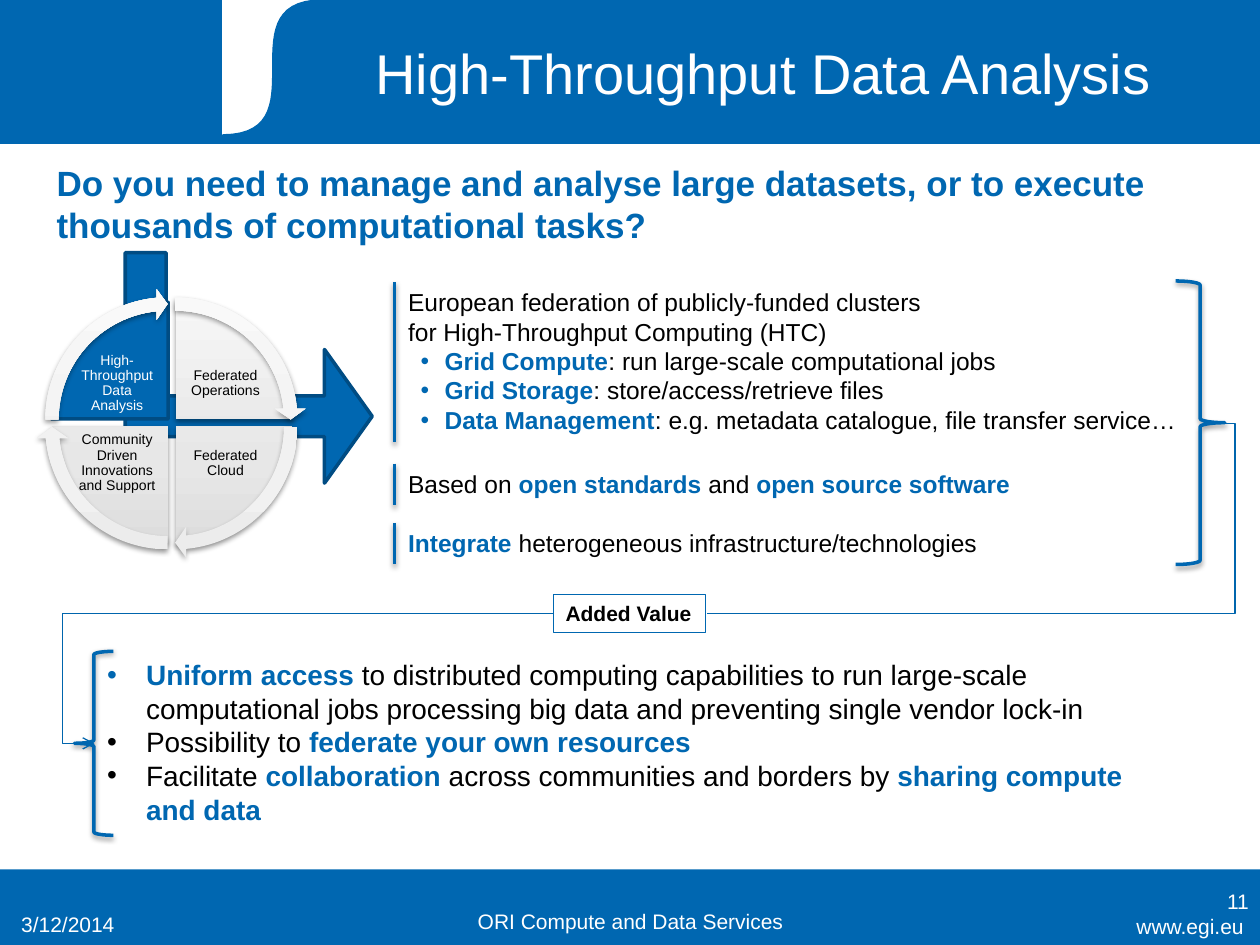
from copy import deepcopy

from lxml.etree import SubElement
from pptx import Presentation
from pptx.dml.color import RGBColor
from pptx.enum.shapes import MSO_CONNECTOR as Link, MSO_SHAPE as Form
from pptx.enum.text import MSO_ANCHOR as Anchor, MSO_AUTO_SIZE as Auto, PP_ALIGN as Align
from pptx.oxml.ns import qn
from pptx.util import Inches, Pt

HUES = {"blue": "0067B1", "dark": "004C83", "link": "0065AD", "white": "FFFFFF", "black": "000000"}
PALE = ["DDDDDD", "E7E7E7", "F6F6F6"]
RING = ["ECECEC", "F1F1F1", "F9F9F9"]


def rgb(hue):
    return RGBColor.from_string(HUES.get(hue, hue))


def box(*sides):
    return [Inches(side) for side in sides]


def shade(item, soft=True):
    fx = SubElement(item._element.spPr, qn("a:effectLst"))
    if soft:
        cast = SubElement(fx, qn("a:outerShdw"), blurRad=str(Pt(3.1)), dist=str(Pt(1.6)),
                          dir="5400000", rotWithShape="0")
        tint = SubElement(cast, qn("a:srgbClr"), val=HUES["black"])
        SubElement(tint, qn("a:alpha"), val="38000")


def paint(item, fill=None, line=None, width=0.75):
    if fill:
        item.fill.solid()
        item.fill.fore_color.rgb = rgb(fill)
    else:
        item.fill.background()
    if line:
        item.line.color.rgb = rgb(line)
        item.line.width = Pt(width)
    else:
        item.line.fill.background()


def blend(item, hues):
    item.fill.gradient()
    item.fill.gradient_angle = 90
    first = item._element.spPr.find(".//" + qn("a:gs"))
    first.addnext(deepcopy(first))
    for stop, hue, pos in zip(item.fill.gradient_stops, hues, (0, 0.35, 1)):
        stop.color.rgb = rgb(hue)
        stop.position = pos
    item.line.fill.background()
    shade(item)


def shape(slide, form, area, fill=None, line=None, width=0.75, adj=()):
    item = slide.shapes.add_shape(form, *box(*area))
    for num, val in enumerate(adj):
        item.adjustments[num] = val
    item.shadow.inherit = False
    paint(item, fill, line, width)
    return item


def dot(para, left, hang):
    props = para._p.get_or_add_pPr()
    props.set("marL", str(Inches(left)))
    props.set("indent", str(-Inches(hang)))
    SubElement(props, qn("a:buFont"), typeface="Arial")
    SubElement(props, qn("a:buChar"), char="•")


def write(frame, lines, size, hue="black", align=Align.LEFT, anchor=Anchor.TOP, bold=False, indent=None):
    frame.word_wrap = True
    frame.auto_size = Auto.NONE
    frame.vertical_anchor = anchor
    for num, line in enumerate(lines):
        para = frame.paragraphs[0] if num == 0 else frame.add_paragraph()
        para.alignment = align
        para.space_before = Pt(0)
        if indent and line.startswith("•"):
            dot(para, *indent)
        for part, words in enumerate(line.lstrip("•").split("*")):
            if words:
                run = para.add_run()
                run.text = words
                run.font.name = "Arial"
                run.font.size = Pt(size)
                run.font.bold = bold or part % 2 == 1
                run.font.color.rgb = rgb("blue" if part % 2 else hue)


def label(slide, area, lines, size, **style):
    frame = slide.shapes.add_textbox(*box(*area)).text_frame
    write(frame, lines, size, **style)
    return frame


def place(slide, item, area):
    item.left, item.top, item.width, item.height = box(*area)
    slide.shapes._spTree.append(item._element)


def header(slide, x, y, w, h):
    shape(slide, Form.RECTANGLE, (x, y, w, h), "blue", "blue")
    left, wide, tall = x + 1.77, 1.97, 1.07
    shape(slide, Form.RECTANGLE, (left, y, wide, tall), "white", "white")
    steps = [num / 30 for num in range(1, 31)]
    curve = [(left + 0.79 * (3 * t * (1 - t) ** 2 + t ** 3), y + tall * ((1 - t) ** 3 + 3 * t * (1 - t) ** 2))
             for t in steps]
    points = [(left, y + tall)] + curve + [(left + wide, y)]
    path = slide.shapes.build_freeform(*box(left + wide, y + tall))
    path.add_line_segments([box(*point) for point in points], close=True)
    swoosh = path.convert_to_shape()
    swoosh.shadow.inherit = False
    paint(swoosh, "blue", "blue")
    title = slide.shapes.title
    place(slide, title, (x + 2.32, y + 0.13, 7.48, 0.95))
    write(title.text_frame, ["High-Throughput Data Analysis"], 32, "white", Align.CENTER, Anchor.MIDDLE)
    title.text_frame.paragraphs[0].line_spacing = 0.9


def footer(slide, x, y, w, h):
    shape(slide, Form.RECTANGLE, (x, y, w, h), "blue")
    cells = [
        ((8.39, 0.3, 1.58, 0.31), "www.egi.eu", Align.RIGHT, Anchor.TOP),
        ((0.07, 0.18, 2.33, 0.4), "3/12/2014", Align.LEFT, Anchor.BOTTOM),
        ((3.42, 0.16, 3.17, 0.4), "ORI Compute and Data Services", Align.CENTER, Anchor.BOTTOM),
        ((7.68, 0.05, 2.33, 0.4), "11", Align.RIGHT, Anchor.MIDDLE),
    ]
    for (dx, dy, wide, tall), text, align, anchor in cells:
        label(slide, (x + dx, y + dy, wide, tall), [text], 12, hue="white", align=align, anchor=anchor)


def wheel(slide, x, y, w, h):
    arrow = shape(slide, Form.BENT_UP_ARROW, (x + 0.77, y - 0.35, 1.83, 1.96), "blue", "dark", 2,
                  (0.177, 0.29, 0.207))
    arrow.rotation = 270
    for flip in ("flipH", "flipV"):
        arrow._element.spPr.xfrm.set(flip, "1")
    gap, rim = 0.06, 0.12
    parts = [
        ("Federated Operations", 1, 0, 162),
        ("Federated Cloud", 1, 1, 0),
        ("Community Driven Innovations and Support", 0, 1, 54),
        ("High-Throughput Data Analysis", 0, 0, 108),
    ]
    for text, col, row, start in parts:
        area = (x + rim + gap * col, y + rim - 0.01 + gap * row, w - 0.29, h - 0.29)
        adj = (start, (start + 54) % 216)
        live = start == 108
        if live:
            shape(slide, Form.PIE, area, "blue", "dark", 2, adj)
        else:
            blend(plain(slide, Form.PIE, area, adj), PALE)
        frame = label(slide, (x + 0.3 + 0.86 * col, y + 0.5 + 0.63 * row, 0.68, 0.51), [text], 8,
                      hue="white" if live else "black", align=Align.CENTER, anchor=Anchor.MIDDLE)
        frame.margin_left = frame.margin_right = frame.margin_top = frame.margin_bottom = Inches(0.01)
        frame.paragraphs[0].line_spacing = 0.9
    for text, col, row, start in parts:
        area = (x + gap * col, y + gap * row, w - gap, h - gap)
        blend(plain(slide, Form.CIRCULAR_ARROW, area, (0.051, 3.275, start + 50.725, start, 0.059)), RING)


def plain(slide, form, area, adj):
    item = slide.shapes.add_shape(form, *box(*area))
    for num, val in enumerate(adj):
        item.adjustments[num] = val
    return item


def facts(slide, x, y, w, h):
    blocks = [
        (0, 1.28, ["European federation of publicly-funded clusters", "for High-Throughput Computing (HTC)",
                   "•*Grid Compute*: run large-scale computational jobs",
                   "•*Grid Storage*: store/access/retrieve files",
                   "•*Data Management*: e.g. metadata catalogue, file transfer service…"]),
        (1.44, 0.34, ["Based on *open standards* and *open source software*"]),
        (1.91, 0.34, ["*Integrate *heterogeneous infrastructure/technologies"]),
    ]
    for dy, tall, lines in blocks:
        label(slide, (x, y + dy, w, tall), lines, 14, indent=(0.29, 0.19))
        rule = slide.shapes.add_connector(Link.STRAIGHT, *box(x - 0.01, y + dy + 0.01, x - 0.01, y + dy + tall))
        rule.line.color.rgb = rgb("blue")
        rule.line.width = Pt(2)
        shade(rule)
    brace(slide, Form.RIGHT_BRACE, (x + w - 0.23, y, 0.39, h))


def brace(slide, form, area):
    item = slide.shapes.add_shape(form, *box(*area))
    paint(item, None, "blue", 2)
    shade(item)


def elbow(slide, ends, bend, tip=False):
    wire = slide.shapes.add_connector(Link.ELBOW, *box(*ends))
    guides = wire._element.spPr.find(qn("a:prstGeom")).get_or_add_avLst()
    SubElement(guides, qn("a:gd"), name="adj1", fmla=f"val {round(bend * 100000)}")
    wire.line.color.rgb = rgb("link")
    wire.line.width = Pt(0.75)
    if tip:
        SubElement(wire.line._get_or_add_ln(), qn("a:tailEnd"), type="arrow")
    shade(wire, False)


def value(slide, x, y, w, h):
    tag = shape(slide, Form.RECTANGLE, (x + 3.8, y, 1.21, 0.3), "white", "blue", 0.25)
    write(tag.text_frame, ["Added Value"], 12, bold=True, anchor=Anchor.MIDDLE)
    tag.text_frame.word_wrap = False
    body = slide.placeholders[1]
    place(slide, body, (x + 0.16, y + 0.45, w - 0.16, 1.46))
    write(body.text_frame, [
        "•*Uniform access *to distributed computing capabilities to run large-scale computational jobs "
        "processing big data and preventing single vendor lock-in",
        "•Possibility to *federate your own resources*",
        "•Facilitate *collaboration *across communities and borders by *sharing compute and data*",
    ], 16, indent=(0.31, 0.31))
    brace(slide, Form.LEFT_BRACE, (x, y + 0.45, 0.31, 1.46))
    elbow(slide, (x + 3.8, y + 0.15, x + 0.16, y + 1.18), 1.07, True)
    elbow(slide, (x + 9.13, y - 1.36, x + 5.02, y + 0.15), -0.02)


def main():
    deck = Presentation()
    deck.slide_width, deck.slide_height = box(10, 7.5)
    slide = deck.slides.add_slide(deck.slide_layouts[1])
    footer(slide, 0, 6.9, 10, 0.6)
    header(slide, 0, 0, 10, 1.14)
    label(slide, (0.35, 1.23, 9.21, 0.77),
          ["Do you need to manage and analyse large datasets, or to execute thousands of computational tasks?"],
          20, hue="blue", bold=True)
    wheel(slide, 0.29, 2.29, 2.14, 2.14)
    facts(slide, 3.14, 2.23, 6.42, 2.25)
    value(slide, 0.59, 4.72, 8.82, 1.91)
    deck.save("out.pptx")


if __name__ == "__main__":
    main()
